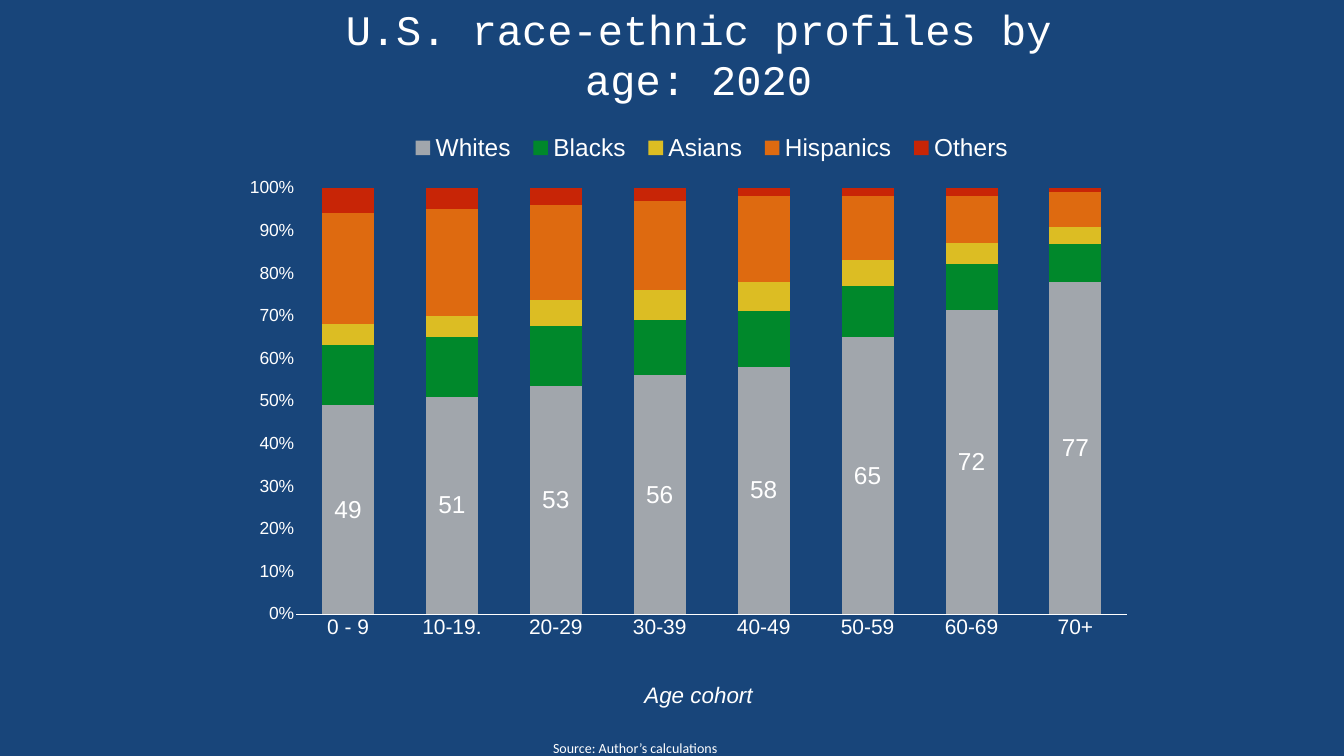
from dataclasses import dataclass
from lxml.etree import SubElement
from pptx import Presentation
from pptx.chart.data import CategoryChartData
from pptx.dml.color import RGBColor
from pptx.enum.chart import XL_CHART_TYPE, XL_LEGEND_POSITION, XL_TICK_MARK
from pptx.enum.shapes import MSO_SHAPE
from pptx.enum.text import MSO_ANCHOR, MSO_AUTO_SIZE, PP_ALIGN
from pptx.oxml.ns import qn
from pptx.util import Pt

TITLE = "U.S. race-ethnic profiles by age: 2020"
SOURCE = "Source: Author’s calculations"
AXIS = "Age cohort"
AGES = ["0 - 9", "10-19.", "20-29", "30-39", "40-49", "50-59", "60-69", "70+"]
GROUPS = [
    ("Whites", "A1A6AC", [49, 51, 53, 56, 58, 65, 72, 77]),
    ("Blacks", "00882B", [14, 14, 14, 13, 13, 12, 11, 9]),
    ("Asians", "DCBD23", [5, 5, 6, 7, 7, 6, 5, 4]),
    ("Hispanics", "DE6A10", [26, 25, 22, 21, 20, 15, 11, 8]),
    ("Others", "C82506", [6, 5, 4, 3, 2, 2, 2, 1]),
]


@dataclass(frozen=True)
class Theme:
    back: str = "18457A"
    ink: str = "FFFFFF"
    head: str = "Courier New"
    sans: str = "Arial"
    foot: str = "Calibri"
    title: int = 60
    key: int = 35
    axis: int = 32
    ages: int = 30
    ticks: int = 25
    note: int = 20


THEME = Theme()


def paint(fill, color):
    fill.solid()
    fill.fore_color.rgb = RGBColor.from_string(color)


def style(font, face, size):
    font.name, font.size = face, Pt(size)
    font.color.rgb = RGBColor.from_string(THEME.ink)


def place(shape, box):
    shape.left, shape.top, shape.width, shape.height = map(Pt, box)


def write(shape, text, face, size, align, inset=6):
    frame = shape.text_frame
    frame.text = text
    frame.word_wrap = True
    frame.auto_size = MSO_AUTO_SIZE.NONE
    frame.vertical_anchor = MSO_ANCHOR.MIDDLE
    frame.margin_left = frame.margin_right = Pt(inset)
    frame.margin_top = frame.margin_bottom = Pt(inset)
    para = frame.paragraphs[0]
    para.alignment = align
    para.line_spacing = 1
    style(para.font, face, size)
    return para


def arrange(area, left, top, wide, high, inner=False):
    old = area.find(qn("c:layout"))
    if old is None:
        old = SubElement(area, qn("c:layout"))
        area.remove(old)
        first = area.find(qn("c:legendPos"))
        if first is None:
            area.insert(0, old)
        else:
            first.addnext(old)
    for child in list(old):
        old.remove(child)
    manual = SubElement(old, qn("c:manualLayout"))
    parts = [("layoutTarget", "inner")] if inner else []
    parts += [("xMode", "edge"), ("yMode", "edge"),
              ("x", left), ("y", top), ("w", wide), ("h", high)]
    for name, value in parts:
        SubElement(manual, qn(f"c:{name}")).set("val", str(value))


def add_bars(slide, box):
    data = CategoryChartData(number_format="#,##0")
    data.categories = AGES
    for name, _, values in GROUPS:
        data.add_series(name, values)
    chart = slide.shapes.add_chart(
        XL_CHART_TYPE.COLUMN_STACKED_100, *map(Pt, box), data).chart
    chart.has_title = False
    style(chart.font, THEME.sans, THEME.ticks)

    plot = chart.plots[0]
    plot.gap_width, plot.overlap = 100, 100
    plot.vary_by_categories = False
    for bars, (_, color, _) in zip(plot.series, GROUPS):
        paint(bars.format.fill, color)

    labels = plot.series[0].data_labels
    labels.show_value = True
    labels.number_format, labels.number_format_is_linked = "#,##0", False
    style(labels.font, THEME.sans, THEME.key)

    for axis, size in ((chart.category_axis, THEME.ages),
                       (chart.value_axis, THEME.ticks)):
        axis.has_major_gridlines = False
        axis.major_tick_mark = axis.minor_tick_mark = XL_TICK_MARK.NONE
        style(axis.tick_labels.font, THEME.sans, size)
    line = chart.category_axis.format.line
    paint(line.fill, THEME.ink)
    line.width = Pt(0.75)
    scale = chart.value_axis
    scale.format.line.fill.background()
    scale.minimum_scale, scale.maximum_scale, scale.major_unit = 0, 1, 0.1
    scale.tick_labels.number_format = "0%"
    scale.tick_labels.number_format_is_linked = False

    chart.has_legend = True
    key = chart.legend
    key.position = XL_LEGEND_POSITION.BOTTOM
    key.include_in_layout = False
    style(key.font, THEME.sans, THEME.key)
    area = chart.element.find(".//" + qn("c:plotArea"))
    arrange(area, 0.05, 0.12, 0.95, 0.8, inner=True)
    arrange(chart.element.find(".//" + qn("c:legend")), 0.17, 0.01, 0.71, 0.07)


def main():
    deck = Presentation()
    deck.slide_width, deck.slide_height = Pt(1920), Pt(1080)
    slide = deck.slides.add_slide(deck.slide_layouts[5])
    paint(slide.background.fill, THEME.back)

    title = slide.shapes.title
    place(title, (485, 34, 1026, 86))
    write(title, TITLE, THEME.head, THEME.title, PP_ALIGN.CENTER)

    note = slide.shapes.add_textbox(*map(Pt, (784, 1051, 445, 36)))
    write(note, SOURCE, THEME.foot, THEME.note, PP_ALIGN.LEFT)

    add_bars(slide, (357, 177, 1254, 761))

    label = slide.shapes.add_shape(
        MSO_SHAPE.RECTANGLE, *map(Pt, (812, 969, 372, 47)))
    label.shadow.inherit = False
    paint(label.fill, THEME.back)
    label.line.fill.background()
    para = write(label, AXIS, THEME.sans, THEME.axis, PP_ALIGN.CENTER, 4)
    para.font.italic = True

    deck.save("out.pptx")


if __name__ == "__main__":
    main()
